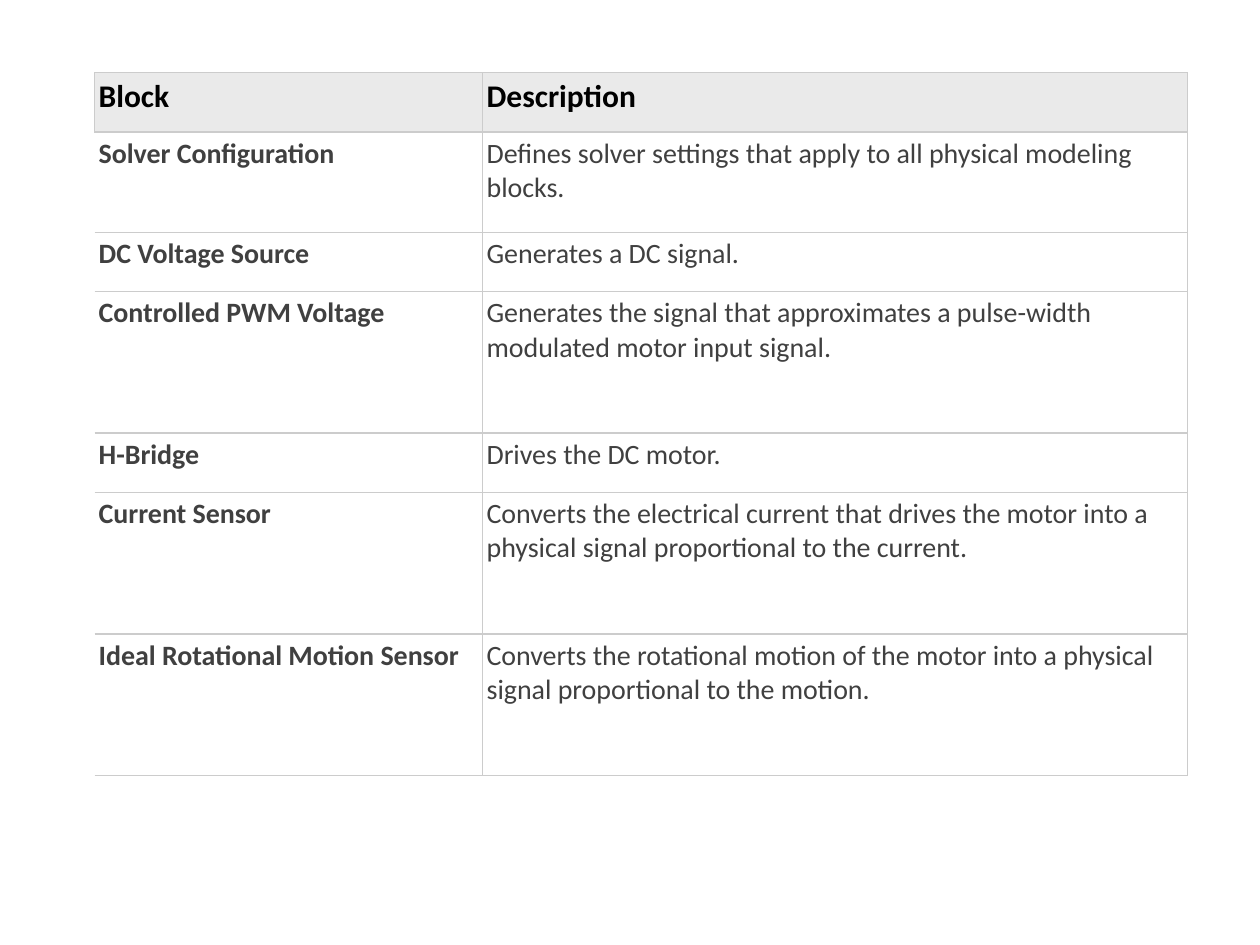
from dataclasses import dataclass

from lxml.etree import SubElement as Sub
from pptx import Presentation as Deck
from pptx.dml.color import RGBColor as Rgb
from pptx.oxml.ns import qn
from pptx.table import _Cell as Cell
from pptx.util import Cm, Pt

HUES = {"head": "EAEAEA", "body": "FFFFFF", "line": "CCCCCC",
        "title": "000000", "text": "404040"}
FONT = "Calibri"
WIDTHS = (7.82, 14.2)
SHORT, MID, TALL = 1.19, 2.02, 2.86


@dataclass
class Row:
    block: str
    note: str
    height: float
    head: bool = False


ROWS = [
    Row("Block", "Description", SHORT, True),
    Row("Solver Configuration",
        "Defines solver settings that apply to all physical modeling blocks.", MID),
    Row("DC Voltage Source", "Generates a DC signal.", SHORT),
    Row("Controlled PWM Voltage",
        "Generates the signal that approximates a pulse-width modulated "
        "motor input signal.", TALL),
    Row("H-Bridge", "Drives the DC motor.", SHORT),
    Row("Current Sensor",
        "Converts the electrical current that drives the motor into a "
        "physical signal proportional to the current.", TALL),
    Row("Ideal Rotational Motion Sensor",
        "Converts the rotational motion of the motor into a physical "
        "signal proportional to the motion.", TALL),
]


def edge(cell: Cell, sides: str) -> None:
    props = cell._tc.get_or_add_tcPr()
    for side in "LRTB":
        line = Sub(props, qn(f"a:ln{side}"), w=str(Pt(0.75)))
        if side in sides:
            fill = Sub(line, qn("a:solidFill"))
            Sub(fill, qn("a:srgbClr"), val=HUES["line"])
        else:
            Sub(line, qn("a:noFill"))


def write(cell: Cell, text: str, head: bool, bold: bool) -> None:
    cell.margin_left = cell.margin_right = Cm(0.08)
    cell.margin_top = cell.margin_bottom = Cm(0.1)
    edge(cell, "RTB" if bold and not head else "LRTB")
    cell.fill.solid()
    cell.fill.fore_color.rgb = Rgb.from_string(HUES["head" if head else "body"])
    run = cell.text_frame.paragraphs[0].add_run()
    run.text = text
    font = run.font
    font.name = FONT
    font.size = Pt(18 if head else 16)
    font.bold = bold or head
    font.color.rgb = Rgb.from_string(HUES["title" if head else "text"])


def main() -> None:
    deck = Deck()
    deck.slide_width, deck.slide_height = Cm(25.4), Cm(19.05)
    slide = deck.slides.add_slide(deck.slide_layouts[6])
    high = sum(row.height for row in ROWS)
    table = slide.shapes.add_table(len(ROWS), len(WIDTHS), Cm(1.91), Cm(1.47),
                                   Cm(sum(WIDTHS)), Cm(high)).table
    table.first_row = table.horz_banding = False
    for col, width in zip(table.columns, WIDTHS):
        col.width = Cm(width)
    for line, row in zip(table.rows, ROWS):
        line.height = Cm(row.height)
        left, right = line.cells
        write(left, row.block, row.head, True)
        write(right, row.note, row.head, False)
    deck.save("out.pptx")


if __name__ == "__main__":
    main()
